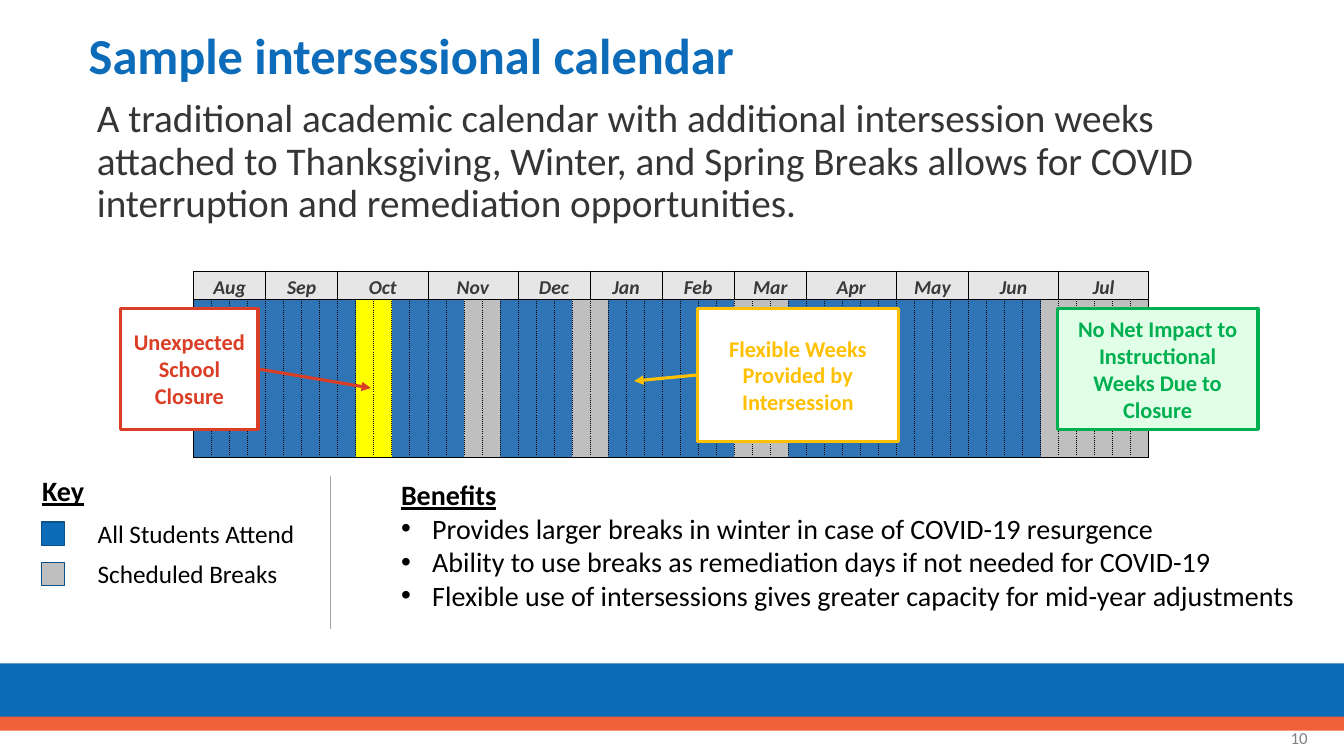
from lxml import etree
from pptx import Presentation
from pptx.dml.color import RGBColor
from pptx.enum.dml import MSO_LINE_DASH_STYLE as Dash
from pptx.enum.shapes import MSO_CONNECTOR as Connector, MSO_SHAPE as Preset
from pptx.enum.text import MSO_ANCHOR as Anchor, MSO_AUTO_SIZE as AutoSize, PP_ALIGN as Align
from pptx.oxml.ns import qn
from pptx.util import Emu, Inches, Pt

COLORS = {
    "blue": "0D6CB9", "navy": "0A5089", "orange": "F16038", "body": "363534",
    "black": "000000", "white": "FFFFFF", "number": "808080", "divider": "A2A2A2",
    "header": "E7E6E6", "month": "3A3838", "attend": "2F75B5", "closure": "FFFF00",
    "break": "BFBFBF", "red": "DA3E26", "green": "00B050", "mint": "E1FFE7",
    "gold": "FFC000",
}
MONTHS = [("Aug", 4), ("Sep", 4), ("Oct", 5), ("Nov", 5), ("Dec", 4), ("Jan", 4),
          ("Feb", 4), ("Mar", 4), ("Apr", 5), ("May", 4), ("Jun", 5), ("Jul", 5)]
WEEK_RUNS = [("attend", 9), ("closure", 2), ("attend", 4), ("break", 2), ("attend", 4),
             ("break", 2), ("attend", 7), ("break", 3), ("attend", 14), ("break", 6)]
BENEFITS = [
    "Provides larger breaks in winter in case of COVID-19 resurgence",
    "Ability to use breaks as remediation days if not needed for COVID-19",
    "Flexible use of intersessions gives greater capacity for mid-year adjustments",
]


def rgb(name):
    return RGBColor.from_string(COLORS[name])


def set_border(cell, side, dash="solid"):
    """Give one side (L, R, T or B) of a cell a thin black line."""
    properties = cell._tc.get_or_add_tcPr()
    line = etree.SubElement(properties, qn(f"a:ln{side}"), w=str(Pt(0.5)))
    fill = etree.SubElement(line, qn("a:solidFill"))
    etree.SubElement(fill, qn("a:srgbClr"), val=COLORS["black"])
    etree.SubElement(line, qn("a:prstDash"), val=dash)


def set_bullet(paragraph, character=None, indent=0):
    """Set a hanging bullet, or none when no character is given."""
    properties = paragraph._p.get_or_add_pPr()
    properties.set("marL", str(Inches(indent)))
    properties.set("indent", str(-Inches(indent)))
    if character:
        etree.SubElement(properties, qn("a:buFont"), typeface="Arial")
        etree.SubElement(properties, qn("a:buChar"), char=character)
    else:
        etree.SubElement(properties, qn("a:buNone"))


class SlideBuilder:
    """Draws on one slide; all lengths are percentages of the slide's size."""

    font_name = "Calibri"

    def __init__(self, presentation):
        self.width = presentation.slide_width
        self.height = presentation.slide_height
        self.slide = presentation.slides.add_slide(presentation.slide_layouts[1])
        self.shapes = self.slide.shapes

    def x(self, share):
        return Emu(round(self.width * share / 100))

    def y(self, share):
        return Emu(round(self.height * share / 100))

    def box(self, left, top, width, height):
        return self.x(left), self.y(top), self.x(width), self.y(height)

    def style(self, paragraph, size, color, bold=False, italic=False, underline=False,
              align=Align.LEFT):
        paragraph.alignment = align
        font = paragraph.font
        font.name, font.size, font.color.rgb = self.font_name, Pt(size), rgb(color)
        font.bold, font.italic, font.underline = bold, italic, underline

    def placeholder(self, index, text, box, size, color, bold=False):
        shape = self.slide.placeholders[index]
        shape.left, shape.top, shape.width, shape.height = self.box(*box)
        frame = shape.text_frame
        frame.text = text
        frame.auto_size = AutoSize.NONE
        frame.vertical_anchor = Anchor.TOP if index else Anchor.MIDDLE
        paragraph = frame.paragraphs[0]
        paragraph.line_spacing = 0.9
        paragraph.space_before = Pt(0)
        set_bullet(paragraph)
        self.style(paragraph, size, color, bold)

    def text(self, text, box, size, color="black", wrap=False, anchor=Anchor.TOP, **style):
        frame = self.shapes.add_textbox(*self.box(*box)).text_frame
        frame.word_wrap = wrap
        frame.vertical_anchor = anchor
        frame.text = text
        self.style(frame.paragraphs[0], size, color, **style)
        return frame

    def bullets(self, frame, items, size):
        for item in items:
            paragraph = frame.add_paragraph()
            paragraph.text = item
            set_bullet(paragraph, "•", 0.31)
            self.style(paragraph, size, "black")

    def rectangle(self, box, fill, line=None, line_width=1):
        shape = self.shapes.add_shape(Preset.RECTANGLE, *self.box(*box))
        shape.shadow.inherit = False
        shape.fill.solid()
        shape.fill.fore_color.rgb = rgb(fill)
        if line:
            shape.line.color.rgb = rgb(line)
            shape.line.width = Pt(line_width)
        else:
            shape.line.fill.background()
        return shape

    def callout(self, text, box, color, fill="white"):
        shape = self.rectangle(box, fill, color, 2.25)
        frame = shape.text_frame
        frame.text = text
        frame.word_wrap = True
        frame.vertical_anchor = Anchor.MIDDLE
        self.style(frame.paragraphs[0], 16, color, bold=True, align=Align.CENTER)
        return shape

    def line(self, start, end, color, width):
        connector = self.shapes.add_connector(
            Connector.STRAIGHT, self.x(start[0]), self.y(start[1]),
            self.x(end[0]), self.y(end[1]))
        connector.line.color.rgb = rgb(color)
        connector.line.width = Pt(width)
        etree.SubElement(connector._element.spPr, qn("a:effectLst"))
        return connector

    def arrow(self, source, side, start, end, color):
        connector = self.line(start, end, color, 2.25)
        connector.begin_connect(source, side)
        connector.line.dash_style = Dash.SOLID
        etree.SubElement(connector.line._get_or_add_ln(), qn("a:tailEnd"), type="triangle")

    def calendar(self, left, top, width, row_heights):
        weeks = [kind for kind, count in WEEK_RUNS for _ in range(count)]
        last = len(weeks) - 1
        table = self.shapes.add_table(
            2, len(weeks), *self.box(left, top, width, sum(row_heights))).table
        table.first_row = table.horz_banding = False
        for row, height in zip(table.rows, row_heights):
            row.height = self.y(height)
        for week, kind in enumerate(weeks):
            for row, fill in enumerate(("header", kind)):
                cell = table.cell(row, week)
                # Narrow margins let the week columns keep their width.
                cell.margin_left = cell.margin_right = cell.margin_top = Inches(0.01)
                cell.margin_bottom = 0
                set_border(cell, "L", "sysDot" if row and week > 0 else "solid")
                set_border(cell, "R", "sysDot" if row and week < last else "solid")
                set_border(cell, "T")
                set_border(cell, "B")
                cell.fill.solid()
                cell.fill.fore_color.rgb = rgb(fill)
        first = 0
        for month, count in MONTHS:
            cell = table.cell(0, first)
            cell.merge(table.cell(0, first + count - 1))
            cell.text = month
            cell.vertical_anchor = Anchor.BOTTOM
            self.style(cell.text_frame.paragraphs[0], 14, "month", bold=True, italic=True,
                       align=Align.CENTER)
            first += count


def main():
    presentation = Presentation()
    presentation.slide_width, presentation.slide_height = Inches(13.33), Inches(7.5)
    page = SlideBuilder(presentation)

    page.rectangle((0, 87.73, 100, 7.73), "blue")
    page.rectangle((0, 94.8, 100, 1.87), "orange")
    page.placeholder(0, "Sample intersessional calendar", (5.85, 2.27, 91.2, 10.93),
                     36, "blue", bold=True)
    page.placeholder(1, "A traditional academic calendar with additional intersession weeks "
                     "attached to Thanksgiving, Winter, and Spring Breaks allows for COVID "
                     "interruption and remediation opportunities.",
                     (6.45, 12.4, 87.15, 63.47), 28, "body")
    page.text("10", (75.53, 94.93, 22.5, 5.33), 12, "number", wrap=True,
              anchor=Anchor.MIDDLE, align=Align.RIGHT)

    page.calendar(14.4, 35.87, 71.18, (3.73, 20.93))
    closure = page.callout("Unexpected School Closure", (9, 40.8, 10.2, 16), "red")
    page.arrow(closure, 3, (19.2, 48.8), (27.6, 51.33), "red")
    page.callout("No Net Impact to Instructional Weeks Due to Closure",
                 (78.67, 40.8, 14.93, 16), "green", "mint")
    flexible = page.callout("Flexible Weeks Provided by Intersession",
                            (51.9, 40.8, 14.93, 17.6), "gold")
    page.arrow(flexible, 1, (51.9, 49.6), (47.18, 50.4), "gold")

    page.text("Key", (2.4, 62, 4.65, 5.87), 20, bold=True, underline=True)
    key = [("All Students Attend", "blue", 16.95), ("Scheduled Breaks", "break", 15)]
    for row, (label, color, width) in enumerate(key):
        top = 67.87 + 5.33 * row
        page.rectangle((3.08, top + 1.2, 1.73, 3.07), color, "navy")
        page.text(label, (6.53, top, width, 5.33), 18)
    page.line((24.6, 62.93), (24.6, 83.2), "divider", 0.5)

    benefits = page.text("Benefits", (29.1, 62.53, 69.68, 19.33), 20, wrap=True,
                         bold=True, underline=True)
    page.bullets(benefits, BENEFITS, 20)
    presentation.save("out.pptx")


if __name__ == "__main__":
    main()
